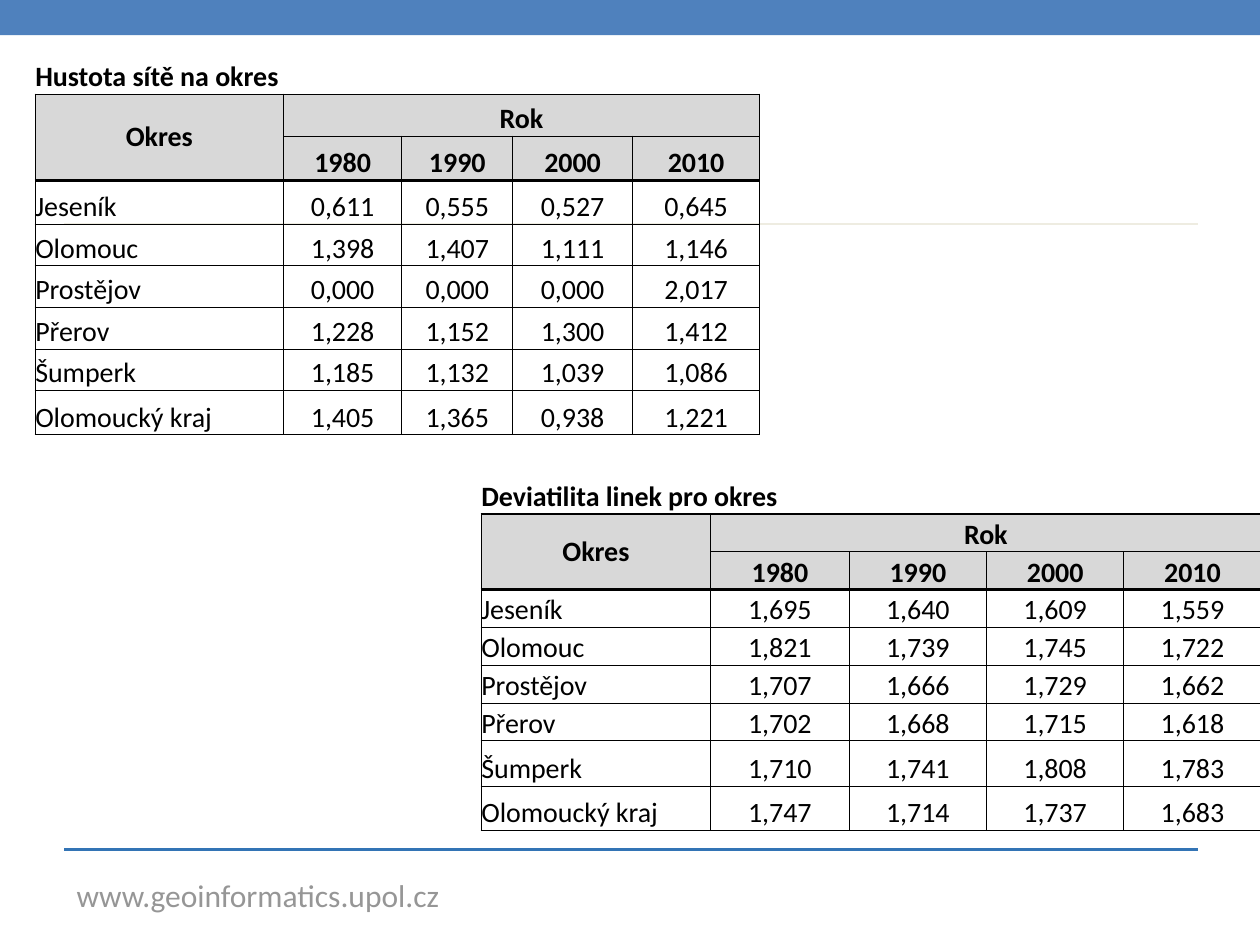
from dataclasses import dataclass

from lxml.etree import SubElement
from pptx import Presentation
from pptx.dml.color import RGBColor
from pptx.enum.shapes import MSO_CONNECTOR, MSO_SHAPE
from pptx.enum.text import MSO_ANCHOR, MSO_AUTO_SIZE, PP_ALIGN
from pptx.oxml.ns import qn
from pptx.slide import Slide
from pptx.table import _Cell
from pptx.util import Inches, Pt

FONT = "Calibri"
BLACK = RGBColor(0x00, 0x00, 0x00)
HEADER_GREY = RGBColor(0xD8, 0xD8, 0xD8)
FOOTER_GREY = RGBColor(0x96, 0x96, 0x96)
BAND_BLUE = RGBColor(0x4F, 0x81, 0xBD)
RULE_BLUE = RGBColor(0x33, 0x74, 0xB5)
RULE_CREAM = RGBColor(0xEE, 0xEC, 0xE1)

PLAIN_STYLE = "{2D5ABB26-0587-4C30-8999-92F81FD0307C}"
THIN, MEDIUM, THICK = 0.5, 1, 2
YEARS = ("1980", "1990", "2000", "2010")
DISTRICTS = ("Jeseník", "Olomouc", "Prostějov", "Přerov", "Šumperk", "Olomoucký kraj")
TITLE_ROW, ROK_ROW, YEAR_ROW, FIRST_DATA_ROW = range(4)
LAST_YEAR_COLUMN = len(YEARS)


@dataclass(frozen=True)
class DistrictTable:
    title: str
    left: float
    top: float
    columns: tuple[float, ...]
    rows: tuple[float, ...]
    title_merge: tuple[int, int]
    values: tuple[tuple[str, ...], ...]


@dataclass(frozen=True)
class Rule:
    y: float
    color: RGBColor
    weight: float


DENSITY = DistrictTable(
    "Hustota sítě na okres", 0.28, 0.21,
    (1.97, 0.94, 0.88, 0.95, 0.95, 0.06),
    (0.54, 0.33, 0.35, 0.35, 0.33, 0.33, 0.33, 0.33, 0.35),
    (1, 2),
    (
        ("0,611", "0,555", "0,527", "0,645"),
        ("1,398", "1,407", "1,111", "1,146"),
        ("0,000", "0,000", "0,000", "2,017"),
        ("1,228", "1,152", "1,300", "1,412"),
        ("1,185", "1,132", "1,039", "1,086"),
        ("1,405", "1,365", "0,938", "1,221"),
    ),
)
DEVIATION = DistrictTable(
    "Deviatilita linek pro okres", 3.82, 3.51,
    (1.82, 1.1, 1.09, 1.09, 1.09),
    (0.57, 0.3, 0.3, 0.3, 0.3, 0.3, 0.3, 0.36, 0.35),
    (0, 1),
    (
        ("1,695", "1,640", "1,609", "1,559"),
        ("1,821", "1,739", "1,745", "1,722"),
        ("1,707", "1,666", "1,729", "1,662"),
        ("1,702", "1,668", "1,715", "1,618"),
        ("1,710", "1,741", "1,808", "1,783"),
        ("1,747", "1,714", "1,737", "1,683"),
    ),
)
RULES = (Rule(6.74, RULE_BLUE, 1.5), Rule(1.78, RULE_CREAM, 1))


def write_cell(cell: _Cell, text: str, bold: bool, centred: bool) -> None:
    paragraph = cell.text_frame.paragraphs[0]
    paragraph.alignment = PP_ALIGN.CENTER if centred else PP_ALIGN.LEFT
    run = paragraph.add_run()
    run.text = text
    run.font.name = FONT
    run.font.size = Pt(16)
    run.font.bold = bold
    run.font.color.rgb = BLACK


def border_weights(row: int, column: int, last_row: int) -> dict[str, float]:
    if row == TITLE_ROW:
        return {"a:lnB": MEDIUM}
    at_right = column >= LAST_YEAR_COLUMN or (row == ROK_ROW and column > 0)
    above_data = row == YEAR_ROW or (row == ROK_ROW and column == 0)
    bottom = THICK if above_data else MEDIUM if row == last_row else THIN
    return {
        "a:lnL": MEDIUM if column == 0 else THIN,
        "a:lnR": MEDIUM if at_right else THIN,
        "a:lnT": {ROK_ROW: MEDIUM, FIRST_DATA_ROW: THICK}.get(row, THIN),
        "a:lnB": bottom,
    }


def draw_borders(cell: _Cell, weights: dict[str, float]) -> None:
    properties = cell._tc.get_or_add_tcPr()
    for side, weight in weights.items():
        line = SubElement(properties, qn(side), w=str(Pt(weight)))
        fill = SubElement(line, qn("a:solidFill"))
        SubElement(fill, qn("a:srgbClr"), val=str(BLACK))


def add_district_table(slide: Slide, data: DistrictTable) -> None:
    frame = slide.shapes.add_table(
        len(data.rows), len(data.columns), Inches(data.left), Inches(data.top),
        Inches(sum(data.columns)), Inches(sum(data.rows)))
    table = frame.table
    table.first_row = table.horz_banding = False
    table._tbl.tblPr.find(qn("a:tableStyleId")).text = PLAIN_STYLE
    for column, width in zip(table.columns, data.columns):
        column.width = Inches(width)
    for row, height in zip(table.rows, data.rows):
        row.height = Inches(height)

    last_row, last_column = len(data.rows) - 1, len(data.columns) - 1
    for r in range(last_row + 1):
        for c in range(last_column + 1):
            cell = table.cell(r, c)
            cell.margin_left = cell.margin_right = 0
            cell.margin_top = cell.margin_bottom = 0
            cell.vertical_anchor = MSO_ANCHOR.BOTTOM
            draw_borders(cell, border_weights(r, c, last_row))
            if r in (ROK_ROW, YEAR_ROW):
                cell.fill.solid()
                cell.fill.fore_color.rgb = HEADER_GREY
            else:
                cell.fill.background()

    merge_start, merge_end = data.title_merge
    table.cell(TITLE_ROW, merge_start).merge(table.cell(TITLE_ROW, merge_end))
    table.cell(ROK_ROW, 0).merge(table.cell(YEAR_ROW, 0))
    table.cell(ROK_ROW, 1).merge(table.cell(ROK_ROW, last_column))
    if last_column > LAST_YEAR_COLUMN:
        for r in range(YEAR_ROW, last_row + 1):
            table.cell(r, LAST_YEAR_COLUMN).merge(table.cell(r, last_column))

    write_cell(table.cell(TITLE_ROW, 0), data.title, True, False)
    district_header = table.cell(ROK_ROW, 0)
    district_header.vertical_anchor = MSO_ANCHOR.MIDDLE
    write_cell(district_header, "Okres", True, True)
    write_cell(table.cell(ROK_ROW, 1), "Rok", True, True)
    for c, year in enumerate(YEARS, 1):
        write_cell(table.cell(YEAR_ROW, c), year, True, True)
    for r, (district, values) in enumerate(zip(DISTRICTS, data.values), FIRST_DATA_ROW):
        write_cell(table.cell(r, 0), district, False, False)
        for c, value in enumerate(values, 1):
            write_cell(table.cell(r, c), value, False, True)


def add_rule(slide: Slide, rule: Rule) -> None:
    connector = slide.shapes.add_connector(
        MSO_CONNECTOR.STRAIGHT, Inches(0.51), Inches(rule.y), Inches(9.51), Inches(rule.y))
    connector.line.color.rgb = rule.color
    connector.line.width = Pt(rule.weight)
    SubElement(connector._element.spPr, qn("a:effectLst"))


def add_footer(slide: Slide) -> None:
    footer = slide.shapes.add_textbox(Inches(0.51), Inches(6.9), Inches(3.11), Inches(0.4))
    footer.text_frame.word_wrap = False
    footer.text_frame.auto_size = MSO_AUTO_SIZE.SHAPE_TO_FIT_TEXT
    run = footer.text_frame.paragraphs[0].add_run()
    run.text = "www.geoinformatics.upol.cz"
    run.font.name = FONT
    run.font.size = Pt(18)
    run.font.color.rgb = FOOTER_GREY


def add_top_band(slide: Slide) -> None:
    band = slide.shapes.add_shape(MSO_SHAPE.RECTANGLE, 0, 0, Inches(10), Inches(0.28))
    band.shadow.inherit = False
    band.fill.solid()
    band.fill.fore_color.rgb = BAND_BLUE
    band.line.fill.background()


def main() -> None:
    presentation = Presentation()
    presentation.slide_width = Inches(10)
    presentation.slide_height = Inches(7.5)
    slide = presentation.slides.add_slide(presentation.slide_layouts[6])
    add_footer(slide)
    add_top_band(slide)
    for rule in RULES:
        add_rule(slide, rule)
    for data in (DENSITY, DEVIATION):
        add_district_table(slide, data)
    presentation.save("out.pptx")


if __name__ == "__main__":
    main()
